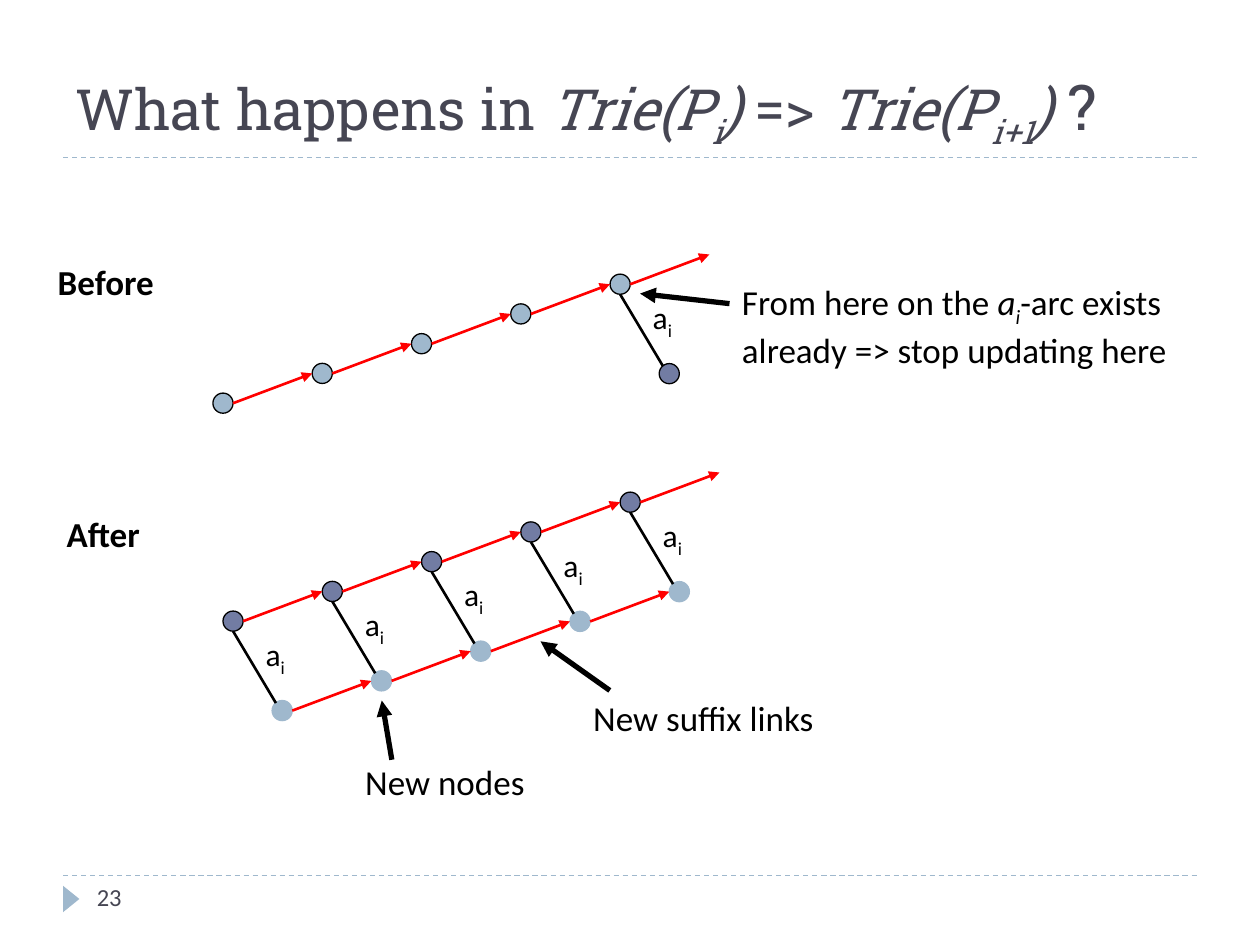
from collections import namedtuple

from lxml.etree import SubElement
from pptx import Presentation
from pptx.dml.color import RGBColor
from pptx.enum.dml import MSO_LINE
from pptx.enum.shapes import MSO_CONNECTOR, MSO_SHAPE
from pptx.enum.text import MSO_ANCHOR
from pptx.oxml.ns import qn
from pptx.util import Inches, Pt

COLORS = {
    "title": "464653",
    "text": "000000",
    "pale": "9FB8CD",
    "dark": "727CA3",
    "suffix": "FF0000",
}
WIDTH, HEIGHT = 10, 7.5
BODY_FONT, TITLE_FONT = "Calibri", "Roboto Slab"
NODE = 0.16
RADIUS = NODE / 2
NODE_COUNT = 5
CHILD_X, CHILD_Y = 0.39, 0.71

Box = namedtuple("Box", "left top width height")


def rgb(name):
    return RGBColor.from_string(COLORS[name])


def add_line(slide, start, end, color, width, arrow=False, dashed=False):
    points = [Inches(value) for value in (*start, *end)]
    connector = slide.shapes.add_connector(MSO_CONNECTOR.STRAIGHT, *points)
    connector.line.color.rgb = rgb(color)
    connector.line.width = Pt(width)
    if dashed:
        connector.line.dash_style = MSO_LINE.DASH
    if arrow:
        SubElement(connector.line._get_or_add_ln(), qn("a:tailEnd"), type="triangle")
    SubElement(connector._element.spPr, qn("a:effectLst"))


def add_text(slide, box, pieces, size, color="text", font=BODY_FONT, anchor=MSO_ANCHOR.TOP):
    """Write pieces of (text, style letters); b is bold, i italic, s subscript."""
    shape = slide.shapes.add_textbox(*(Inches(value) for value in box))
    frame = shape.text_frame
    frame.word_wrap = True
    frame.vertical_anchor = anchor
    paragraph = frame.paragraphs[0]
    for text, style in pieces:
        run = paragraph.add_run()
        run.text = text
        run.font.name = font
        run.font.size = Pt(size)
        run.font.color.rgb = rgb(color)
        run.font.bold = "b" in style
        run.font.italic = "i" in style
        if "s" in style:
            run.font._element.set("baseline", "-25000")
    return paragraph


def add_solid(slide, kind, box, fill, line=None):
    shape = slide.shapes.add_shape(kind, *(Inches(value) for value in box))
    shape.shadow.inherit = False
    shape.fill.solid()
    shape.fill.fore_color.rgb = rgb(fill)
    if line:
        shape.line.color.rgb = rgb(line)
        shape.line.width = Pt(0.75)
    else:
        shape.line.fill.background()
    return shape


def add_node(slide, center, fill, line="text"):
    x, y = center
    add_solid(slide, MSO_SHAPE.OVAL, Box(x - RADIUS, y - RADIUS, NODE, NODE), fill, line)


def add_suffix_links(slide, centers):
    for (x1, y1), (x2, y2) in zip(centers, centers[1:]):
        add_line(slide, (x1 + RADIUS, y1), (x2 - RADIUS, y2), "suffix", 1.5, arrow=True)


def diagonal(box):
    """Return the node centres rising from bottom left, plus the open end."""
    return [
        (box.left + box.width * step / NODE_COUNT,
         box.top + box.height * (1 - step / NODE_COUNT))
        for step in range(NODE_COUNT + 1)
    ]


def add_child(slide, parent, fill, line):
    """Hang a child node below its parent on a labelled arc."""
    x, y = parent
    child = (x + CHILD_X, y + CHILD_Y)
    add_node(slide, child, fill, line)
    add_line(slide, (x, y + RADIUS), (child[0] - 0.05, child[1] - 0.06), "text", 1.5)
    add_text(slide, Box(x + 0.16, y + 0.06, 0.63, 0.4), [("a", ""), ("i", "s")], 18)
    return child


def add_chain(slide, box, fill):
    centers = diagonal(box)
    for center in centers[:-1]:
        add_node(slide, center, fill)
    add_suffix_links(slide, centers)
    return centers[:-1]


def add_before(slide, box):
    parents = add_chain(slide, box, "pale")
    add_child(slide, parents[-1], "dark", "text")


def add_after(slide, box):
    parents = add_chain(slide, box, "dark")
    children = [add_child(slide, parent, "pale", "pale") for parent in parents]
    add_suffix_links(slide, children)


def add_callout(slide, box, pieces, start, end):
    """Add a note and the thick arrow that leads from it."""
    add_text(slide, box, pieces, 20)
    add_line(slide, start, end, "text", 3, arrow=True)


def add_header(slide, box):
    pieces = [
        ("What happens in ", ""), ("Trie(P", "i"), ("i", "is"), (")", "i"),
        (" => ", ""), ("Trie(P", "i"), ("i+1", "is"), (")", "i"), (" ?", ""),
    ]
    paragraph = add_text(slide, box, pieces, 32.4, "title", TITLE_FONT, MSO_ANCHOR.BOTTOM)
    paragraph.runs[-1].font.size = Pt(36)
    bottom = box.top + box.height
    add_line(slide, (box.left, bottom), (box.left + box.width, bottom), "pale", 0.75, dashed=True)


def add_footer(slide, box):
    add_line(slide, (box.left, box.top), (box.left + box.width, box.top), "pale", 0.75, dashed=True)
    marker = Box(box.left - 0.04, box.top + 0.12, 0.21, 0.13)
    add_solid(slide, MSO_SHAPE.ISOSCELES_TRIANGLE, marker, "pale").rotation = 90
    add_text(slide, Box(box.left + 0.17, box.top, 2.17, box.height), [("23", "")], 14, "title")


def main():
    presentation = Presentation()
    presentation.slide_width = Inches(WIDTH)
    presentation.slide_height = Inches(HEIGHT)
    slide = presentation.slides.add_slide(presentation.slide_layouts[6])

    margin = WIDTH * 0.05
    content_width = WIDTH - 2 * margin
    add_header(slide, Box(margin, 0.25, content_width, 1))
    add_footer(slide, Box(margin, 6.95, content_width, 0.4))

    add_text(slide, Box(0.36, 2.02, 1.49, 0.43), [("Before", "b")], 20)
    add_before(slide, Box(1.77, 2.02, 3.94, 1.18))
    add_text(slide, Box(0.43, 4.02, 1.49, 0.43), [("After", "b")], 20)
    add_after(slide, Box(1.85, 3.75, 3.94, 1.18))

    stop_note = [
        ("From here on the ", ""), ("a", "i"), ("i", "is"),
        ("-arc exists already => stop updating here", ""),
    ]
    add_callout(slide, Box(5.79, 2.18, 3.62, 1.1), stop_note, (5.79, 2.41), (5.08, 2.33))
    add_callout(slide, Box(2.8, 5.99, 2.12, 0.43), [("New nodes", "")], (3.11, 6.03), (3.03, 5.56))
    add_callout(slide, Box(4.61, 5.48, 2.12, 0.43), [("New suffix links", "")], (4.84, 5.48), (4.29, 5.09))

    presentation.save("out.pptx")


if __name__ == "__main__":
    main()
